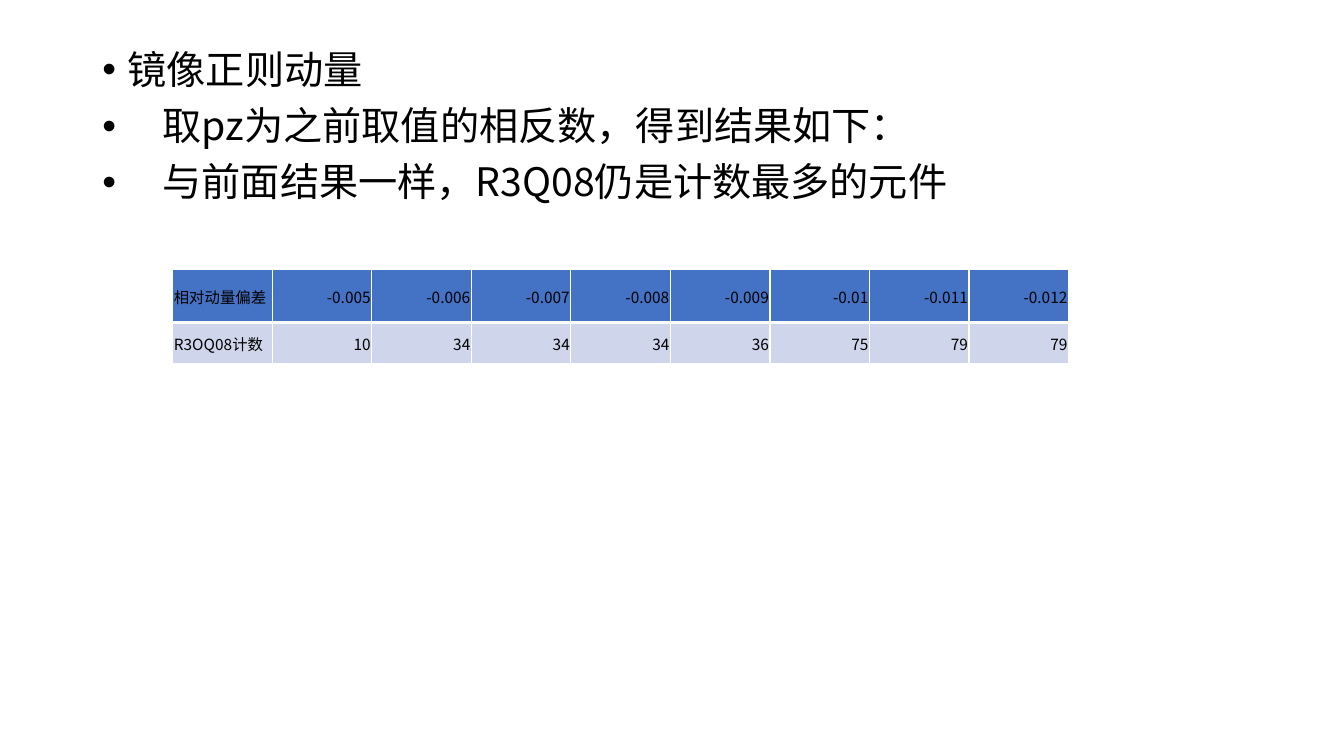
"""Build the slide on mirrored canonical momentum."""
import dataclasses

import lxml.etree
import pptx
import pptx.dml.color
import pptx.enum.text
import pptx.oxml.ns
import pptx.slide
import pptx.table
import pptx.text.text
import pptx.util


@dataclasses.dataclass(frozen=True)
class Theme:
    font: str = "Noto Sans CJK SC"
    ink: str = "000000"
    head: str = "4472C4"
    band: str = "CFD5EA"
    edge: str = "FFFFFF"
    body: float = 28
    cell: float = 11


@dataclasses.dataclass(frozen=True)
class Point:
    text: str
    hang: float


@dataclasses.dataclass(frozen=True)
class Row:
    label: str
    values: tuple[str, ...]
    height: float
    fill: str
    top: float
    bottom: float


THEME = Theme()
POINTS = (
    Point("镜像正则动量", 18),
    Point("取pz为之前取值的相反数，得到结果如下：", 43),
    Point("与前面结果一样，R3Q08仍是计数最多的元件", 43),
)
ROWS = (
    Row("相对动量偏差",
        ("-0.005", "-0.006", "-0.007", "-0.008", "-0.009", "-0.01", "-0.011", "-0.012"),
        38.2, THEME.head, 1, 3),
    Row("R3OQ08计数", ("10", "34", "34", "34", "36", "75", "79", "79"),
        29.5, THEME.band, 3, 1),
)
COLUMN = 71.1


def add_run(para: pptx.text.text._Paragraph, text: str, size: float) -> None:
    run = para.add_run()
    run.text = text
    run.font.size = pptx.util.Pt(size)
    run.font.color.rgb = pptx.dml.color.RGBColor.from_string(THEME.ink)
    run.font.name = THEME.font
    east = lxml.etree.SubElement(run.font._element, pptx.oxml.ns.qn("a:ea"))
    east.set("typeface", THEME.font)


def draw_points(slide: pptx.slide.Slide) -> None:
    body = slide.placeholders[1]
    body.left, body.top = pptx.util.Pt(66), pptx.util.Pt(32.4)
    body.width, body.height = pptx.util.Pt(828), pptx.util.Pt(453.6)
    frame = body.text_frame
    frame.auto_size = pptx.enum.text.MSO_AUTO_SIZE.NONE
    for index, point in enumerate(POINTS):
        para = frame.add_paragraph() if index else frame.paragraphs[0]
        para.line_spacing = 0.9
        para.space_before = pptx.util.Pt(10)
        props = para._p.get_or_add_pPr()
        props.set("marL", str(pptx.util.Pt(point.hang)))
        props.set("indent", str(-pptx.util.Pt(point.hang)))
        add_run(para, point.text, THEME.body)


def add_edge(cell: pptx.table._Cell, side: str, width: float) -> None:
    props = cell._tc.get_or_add_tcPr()
    line = lxml.etree.SubElement(props, pptx.oxml.ns.qn(f"a:ln{side}"))
    line.set("w", str(pptx.util.Pt(width)))
    fill = lxml.etree.SubElement(line, pptx.oxml.ns.qn("a:solidFill"))
    lxml.etree.SubElement(fill, pptx.oxml.ns.qn("a:srgbClr")).set("val", THEME.edge)


def draw_cell(cell: pptx.table._Cell, text: str, row: Row, first: bool) -> None:
    cell.margin_left = cell.margin_right = cell.margin_top = pptx.util.Pt(0.75)
    cell.margin_bottom = 0
    cell.vertical_anchor = pptx.enum.text.MSO_ANCHOR.MIDDLE
    for side, width in (("L", 1), ("R", 1), ("T", row.top), ("B", row.bottom)):
        add_edge(cell, side, width)
    cell.fill.solid()
    cell.fill.fore_color.rgb = pptx.dml.color.RGBColor.from_string(row.fill)
    para = cell.text_frame.paragraphs[0]
    align = pptx.enum.text.PP_ALIGN
    para.alignment = align.LEFT if first else align.RIGHT
    add_run(para, text, THEME.cell)


def draw_table(slide: pptx.slide.Slide) -> None:
    count = len(ROWS[0].values) + 1
    frame = slide.shapes.add_table(
        len(ROWS), count, pptx.util.Pt(123.4), pptx.util.Pt(192.2),
        pptx.util.Pt(COLUMN * count), pptx.util.Pt(sum(row.height for row in ROWS)))
    table = frame.table
    table.first_row = table.horz_banding = False
    for column in table.columns:
        column.width = pptx.util.Pt(COLUMN)
    for down, row in enumerate(ROWS):
        table.rows[down].height = pptx.util.Pt(row.height)
        for across, text in enumerate((row.label, *row.values)):
            draw_cell(table.cell(down, across), text, row, across == 0)


def main() -> None:
    deck = pptx.Presentation()
    deck.slide_width, deck.slide_height = pptx.util.Pt(960), pptx.util.Pt(540)
    slide = deck.slides.add_slide(deck.slide_layouts.get_by_name("Title and Content"))
    title = slide.shapes.title.element
    title.getparent().remove(title)
    draw_points(slide)
    draw_table(slide)
    deck.save("out.pptx")


if __name__ == "__main__":
    main()
